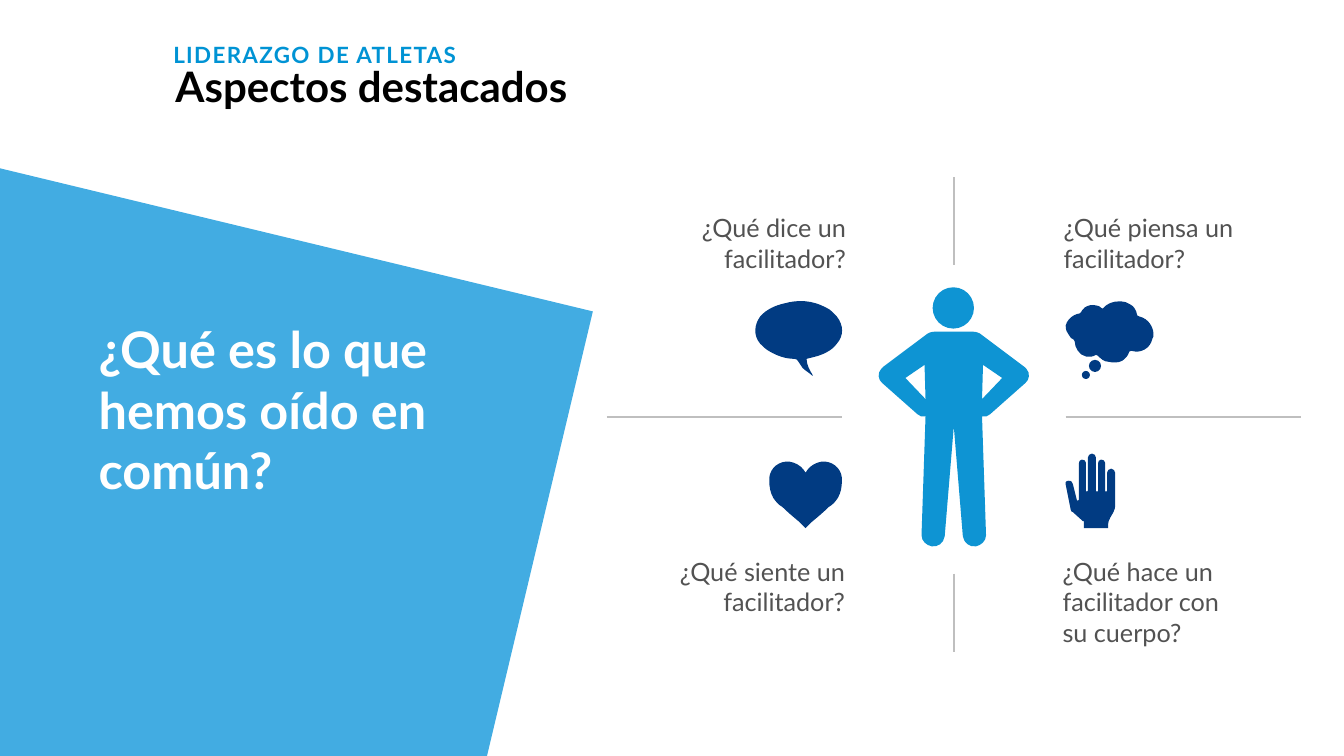
from pptx import Presentation, util as u
from pptx.dml.color import RGBColor
from pptx.enum import shapes, text
from pptx.oxml.ns import qn
from lxml import etree

BLUE, NAVY, SKY, GREY, RULE = "42ACE2", "013B82", "0E94D3", "525252", "BFBFBF"
LEFT, RIGHT = text.PP_ALIGN.LEFT, text.PP_ALIGN.RIGHT

# left, top, width, height, wording, alignment, format
TITLE = (1.64, 0.61, 8.09, 0.51, "Aspectos destacados", LEFT,
         dict(size=30, color="000000", bold=True))
LABEL = dict(size=18, color=GREY, bold=False)
TEXTS = [
    (1.62, 0.36, 3.99, 0.64, "LIDERAZGO DE ATLETAS", LEFT,
     dict(size=16, color="0093D4", bold=True, spacing=1)),
    (0.88, 3.11, 4.23, 1.31, "¿Qué es lo que hemos oído en común?", LEFT,
     dict(size=36, color="FFFFFF", bold=True)),
    (10.45, 2.06, 2.44, 0.71, "¿Qué piensa un facilitador?", LEFT, LABEL),
    (10.44, 5.47, 1.88, 1.01, "¿Qué hace un facilitador con su cuerpo?", LEFT, LABEL),
    (6.36, 2.06, 2.13, 0.71, "¿Qué dice un facilitador?", RIGHT, LABEL),
    (6.17, 5.47, 2.31, 0.71, "¿Qué siente un facilitador?", RIGHT, LABEL),
]
RULES = [(6.02, 4.14, 8.35, 4.14), (10.57, 4.14, 12.9, 4.14),
         (9.46, 1.76, 9.46, 2.63), (9.46, 5.69, 9.46, 6.47)]
CIRCLES = [(9.25, 2.85, 0.41, SKY), (10.8, 3.57, 0.12, NAVY), (10.73, 3.68, 0.08, NAVY)]

# Outlines: two numbers are a straight step, six a Bézier step
PANEL = [(0, 1.67), (5.88, 3.09), (4.83, 7.5), (0, 7.5)]
THOUGHT = [
    (11.1, 2.99), (11.04, 2.99, 10.98, 3.01, 10.94, 3.06), (10.93, 3.06),
    (10.91, 3.04, 10.89, 3.03, 10.87, 3.03), (10.83, 3.02, 10.79, 3.03, 10.76, 3.05),
    (10.74, 3.07, 10.73, 3.08, 10.72, 3.1), (10.71, 3.11),
    (10.69, 3.11, 10.67, 3.12, 10.65, 3.13), (10.61, 3.15, 10.58, 3.19, 10.57, 3.23),
    (10.57, 3.27, 10.58, 3.3, 10.6, 3.32), (10.61, 3.35, 10.63, 3.36, 10.65, 3.37),
    (10.66, 3.39), (10.66, 3.42, 10.67, 3.45, 10.69, 3.48),
    (10.73, 3.54, 10.81, 3.56, 10.87, 3.52), (10.89, 3.53),
    (10.92, 3.56, 10.95, 3.59, 11, 3.59), (11.04, 3.6, 11.09, 3.6, 11.13, 3.58),
    (11.16, 3.56, 11.19, 3.53, 11.2, 3.49), (11.22, 3.48),
    (11.31, 3.51, 11.41, 3.46, 11.43, 3.36), (11.44, 3.34),
    (11.45, 3.25, 11.39, 3.16, 11.3, 3.14), (11.28, 3.13),
    (11.27, 3.08, 11.25, 3.04, 11.21, 3.02), (11.18, 3, 11.15, 2.99, 11.12, 2.99)]
SPEECH = [
    (8, 3.56), (8, 3.62, 8.03, 3.67, 8.06, 3.72), (8.06, 3.73),
    (8.03, 3.7, 7.99, 3.68, 7.96, 3.65), (7.95, 3.63, 7.93, 3.61, 7.92, 3.59),
    (7.91, 3.57, 7.9, 3.56, 7.88, 3.56), (7.79, 3.56, 7.71, 3.53, 7.64, 3.49),
    (7.6, 3.47, 7.57, 3.44, 7.54, 3.41), (7.47, 3.33, 7.48, 3.22, 7.54, 3.14),
    (7.6, 3.07, 7.69, 3.03, 7.78, 3.01), (7.92, 2.97, 8.06, 2.98, 8.19, 3.05),
    (8.24, 3.07, 8.27, 3.11, 8.3, 3.14), (8.37, 3.23, 8.37, 3.33, 8.3, 3.41),
    (8.25, 3.48, 8.16, 3.52, 8.08, 3.54), (8.05, 3.55, 8.03, 3.55, 8, 3.56)]
HAND = [
    (10.99, 5.24), (10.99, 5.2), (10.99, 5.18, 11, 5.16, 11.01, 5.14), (11.02, 5.12),
    (11.04, 5.09, 11.06, 5.05, 11.06, 5.02), (11.06, 4.69),
    (11.06, 4.67, 11.04, 4.65, 11.02, 4.65), (11, 4.65, 10.98, 4.67, 10.98, 4.69),
    (10.98, 4.87), (10.97, 4.88), (10.96, 4.87), (10.96, 4.59),
    (10.96, 4.57, 10.94, 4.56, 10.92, 4.56), (10.9, 4.56, 10.89, 4.58, 10.89, 4.6),
    (10.89, 4.87), (10.88, 4.88), (10.87, 4.87), (10.87, 4.54),
    (10.87, 4.52, 10.85, 4.5, 10.83, 4.5), (10.81, 4.5, 10.79, 4.52, 10.79, 4.54),
    (10.79, 4.87), (10.78, 4.88), (10.77, 4.87), (10.77, 4.59),
    (10.77, 4.57, 10.75, 4.56, 10.73, 4.56), (10.71, 4.56, 10.7, 4.58, 10.7, 4.6),
    (10.7, 4.96), (10.69, 4.97), (10.68, 4.96), (10.64, 4.8),
    (10.63, 4.78, 10.62, 4.76, 10.6, 4.77), (10.57, 4.77, 10.56, 4.79, 10.57, 4.81),
    (10.62, 5.06), (10.62, 5.07, 10.63, 5.08, 10.64, 5.08), (10.74, 5.17),
    (10.75, 5.17), (10.75, 5.24)]
HEART_AXIS, BODY_AXIS = 7.99, 9.46
HALF_HEART = [
    (7.99, 4.69), (8, 4.68, 8, 4.67, 8.01, 4.66), (8.04, 4.62, 8.09, 4.59, 8.15, 4.58),
    (8.25, 4.57, 8.34, 4.64, 8.35, 4.74), (8.35, 4.77),
    (8.35, 4.83, 8.34, 4.89, 8.31, 4.94), (8.29, 4.97, 8.26, 5.01, 8.22, 5.03),
    (8.17, 5.08, 8.11, 5.13, 8.05, 5.18), (8.03, 5.2, 8.01, 5.22, 7.99, 5.24)]
HALF_BODY = [
    (9.46, 3.29), (9.62, 3.29), (9.65, 3.29, 9.69, 3.29, 9.72, 3.31), (10.16, 3.64),
    (10.18, 3.66), (10.22, 3.7, 10.21, 3.77, 10.17, 3.8), (9.82, 4.11),
    (9.8, 4.13, 9.77, 4.14, 9.74, 4.13), (9.78, 5.31),
    (9.78, 5.37, 9.73, 5.41, 9.68, 5.42), (9.62, 5.43, 9.56, 5.39, 9.55, 5.32),
    (9.46, 4.23)]
ARM_GAP = [(9.74, 3.96), (9.75, 3.62), (9.94, 3.75)]


def rgb(value):
    return RGBColor.from_string(value)


def pairs(step):
    return list(zip(step[::2], step[1::2]))


def mirror(outline, axis):
    """Reflect an outline left to right and run it backwards."""
    flipped = [[(2 * axis - x, y) for x, y in pairs(step)] for step in outline]
    mirrored = [flipped[-1][-1]]
    for before, step in reversed(list(zip(flipped, flipped[1:]))):
        mirrored.append(sum(step[-2::-1] + [before[-1]], ()))
    return mirrored


def symmetric(half, axis):
    return half + mirror(half, axis)[1:-1] + mirror(half, axis)[-1:]


def paint(shape, color):
    shape.shadow.inherit = False
    shape.fill.solid()
    shape.fill.fore_color.rgb = rgb(color)
    shape.line.fill.background()


def add_outline(slide, color, *contours):
    contours = [[[(u.Inches(x), u.Inches(y)) for x, y in pairs(step)] for step in contour]
                for contour in contours]
    builder = slide.shapes.build_freeform(*contours[0][0][-1], scale=1.0)
    for index, contour in enumerate(contours):
        if index:
            builder.move_to(*contour[0][-1])
        builder.add_line_segments([step[-1] for step in contour[1:]])
    shape = builder.convert_to_shape()
    paint(shape, color)

    # A straight segment becomes a cubic one where its step has control points
    segments = list(shape._element.iter(qn("a:lnTo")))
    steps = [step for contour in contours for step in contour[1:]]
    for segment, step in zip(segments, steps):
        if len(step) == 3:
            segment.tag = qn("a:cubicBezTo")
            for position, (x, y) in enumerate(step[:2]):
                point = etree.Element(qn("a:pt"), x=str(x - shape.left), y=str(y - shape.top))
                segment.insert(position, point)


def write(shape, wording, alignment, size, color, bold, spacing=0):
    frame = shape.text_frame
    settings = dict(word_wrap=True, auto_size=text.MSO_AUTO_SIZE.NONE,
                    vertical_anchor=text.MSO_ANCHOR.TOP)
    for name, value in settings.items():
        setattr(frame, name, value)
    paragraph = frame.paragraphs[0]
    paragraph.alignment = alignment
    run = paragraph.add_run()
    run.text = wording
    for name, value in dict(name="Lato", size=u.Pt(size), bold=bold).items():
        setattr(run.font, name, value)
    run.font.color.rgb = rgb(color)
    if spacing:
        run.font._element.set("spc", str(spacing * 100))


def main():
    presentation = Presentation()
    presentation.slide_width, presentation.slide_height = u.Inches(13.33), u.Inches(7.5)
    slide = presentation.slides.add_slide(presentation.slide_layouts[5])

    add_outline(slide, BLUE, PANEL)
    for outline in (THOUGHT, SPEECH, symmetric(HALF_HEART, HEART_AXIS), HAND):
        add_outline(slide, NAVY, outline)
    add_outline(slide, SKY, symmetric(HALF_BODY, BODY_AXIS),
                ARM_GAP, mirror(ARM_GAP, BODY_AXIS))
    for left, top, size, color in CIRCLES:
        box = map(u.Inches, (left, top, size, size))
        paint(slide.shapes.add_shape(shapes.MSO_SHAPE.OVAL, *box), color)

    for ends in RULES:
        rule = slide.shapes.add_connector(shapes.MSO_CONNECTOR.STRAIGHT,
                                          *map(u.Inches, ends))
        rule.line.color.rgb, rule.line.width = rgb(RULE), u.Pt(1.47)
        etree.SubElement(rule._element.spPr, qn("a:effectLst"))

    title = slide.shapes.title
    *box, wording, alignment, style = TITLE
    for name, value in zip(("left", "top", "width", "height"), box):
        setattr(title, name, u.Inches(value))
    write(title, wording, alignment, **style)
    title.text_frame.paragraphs[0].line_spacing = 0.9
    for *box, wording, alignment, style in TEXTS:
        write(slide.shapes.add_textbox(*map(u.Inches, box)), wording, alignment, **style)

    presentation.save("out.pptx")


if __name__ == "__main__":
    main()
